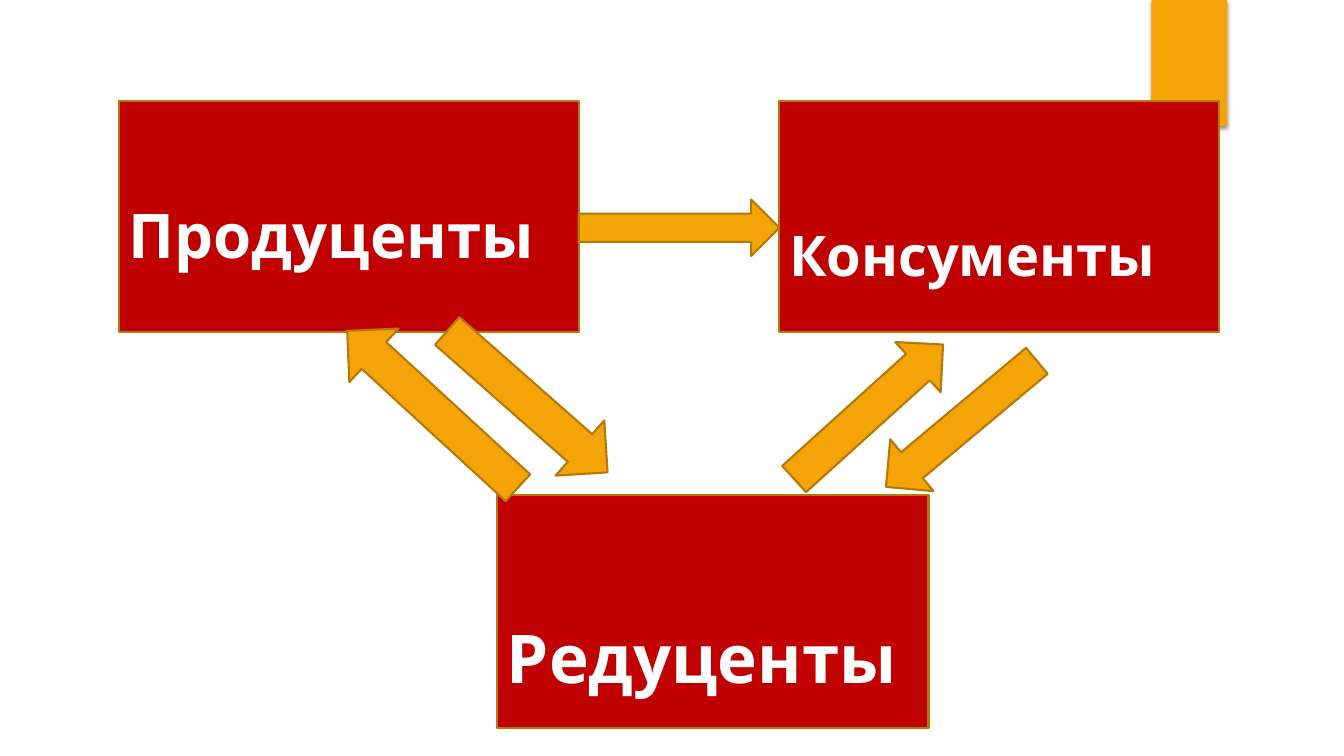
from dataclasses import dataclass

from lxml.etree import SubElement
from pptx import Presentation
from pptx.dml.color import RGBColor
from pptx.enum.shapes import MSO_SHAPE as Shape
from pptx.enum.text import MSO_ANCHOR as Anchor, PP_ALIGN as Align
from pptx.oxml.ns import qn
from pptx.util import Inches, Pt


@dataclass(frozen=True)
class Theme:
    amber: RGBColor = RGBColor(0xF5, 0xA4, 0x08)
    outline: RGBColor = RGBColor(0xB5, 0x79, 0x06)
    red: RGBColor = RGBColor(0xC0, 0x00, 0x00)
    white: RGBColor = RGBColor(0xFF, 0xFF, 0xFF)
    font: str = "League Spartan"
    producers_size: int = 44
    consumers_size: int = 40
    decomposers_size: int = 48
    outline_width: float = 1.5


THEME = Theme()


def set_format(target, values):
    for name, value in values.items():
        setattr(target, name, value)


def add_filled(slide, kind, box, fill, outlined=True):
    part = slide.shapes.add_shape(kind, *map(Inches, box))
    part.shadow.inherit = False
    part.fill.solid()
    part.fill.fore_color.rgb = fill
    if outlined:
        part.line.color.rgb = THEME.outline
        part.line.width = Pt(THEME.outline_width)
    else:
        part.line.fill.background()
    return part


def add_ribbon(slide, box):
    """Draw the corner tab with a soft shadow falling straight down."""
    ribbon = add_filled(slide, Shape.RECTANGLE, box, THEME.amber, outlined=False)
    effects = ribbon._element.spPr.find(qn("a:effectLst"))
    shadow = SubElement(effects, qn("a:outerShdw"), blurRad=str(Pt(3)),
                        dist=str(Pt(2)), dir="5400000", rotWithShape="0")
    black = SubElement(shadow, qn("a:srgbClr"), val="000000")
    SubElement(black, qn("a:alpha"), val="45000")


def add_group(slide, box, name, size, drop):
    """Draw one group of organisms, its name lowered from the middle by drop inches."""
    group = add_filled(slide, Shape.RECTANGLE, box, THEME.red)
    frame = group.text_frame
    set_format(frame, {"word_wrap": True, "vertical_anchor": Anchor.MIDDLE,
                       "margin_top": Inches(0.05 + 2 * drop)})
    label = frame.paragraphs[0]
    label.text = name
    label.alignment = Align.LEFT
    set_format(label.font, {"name": THEME.font, "size": Pt(size), "bold": True})
    label.font.color.rgb = THEME.white


def add_flow(slide, box, rotation=0, shaft=0.5):
    arrow = add_filled(slide, Shape.RIGHT_ARROW, box, THEME.amber)
    arrow.rotation = rotation
    arrow.adjustments[0] = shaft


def add_cycle(slide, box):
    """Draw the three groups and the flows between them inside box."""
    left, top, width, height = box
    upper_height, lower_height = 2.29, 2.31
    producers_width, consumers_width = 4.56, 4.36
    consumers_left = left + width - consumers_width
    groups = (
        ((left, top, producers_width, upper_height),
         "Продуценты", THEME.producers_size, 0.17),
        ((consumers_left, top, consumers_width, upper_height),
         "Консументы", THEME.consumers_size, 0.38),
        ((left + 3.75, top + height - lower_height, 4.28, lower_height),
         "Редуценты", THEME.decomposers_size, 0.45),
    )
    for group in groups:
        add_group(slide, *group)

    producers_right = left + producers_width
    add_flow(slide, (producers_right, top + 0.98,
                     consumers_left - producers_right, 0.56))
    diagonal_flows = (
        ((2.99, 2.62, 2.12, 0.73), 41.4, 0.5),
        ((1.96, 2.7, 2.3, 0.72), 222.6, 0.5),
        ((6.44, 2.75, 1.99, 0.67), 317.9, 0.525),
        ((7.38, 2.87, 1.95, 0.67), 140.1, 0.5),
    )
    for (x, y, length, thickness), rotation, shaft in diagonal_flows:
        add_flow(slide, (left + x, top + y, length, thickness), rotation, shaft)


def main():
    deck = Presentation()
    deck.slide_width, deck.slide_height = Inches(13.33), Inches(7.5)
    slide = deck.slides.add_slide(deck.slide_layouts[6])
    add_ribbon(slide, (11.42, 0, 0.75, 1.25))
    add_cycle(slide, (1.18, 1, 10.91, 6.22))
    deck.save("out.pptx")


if __name__ == "__main__":
    main()
